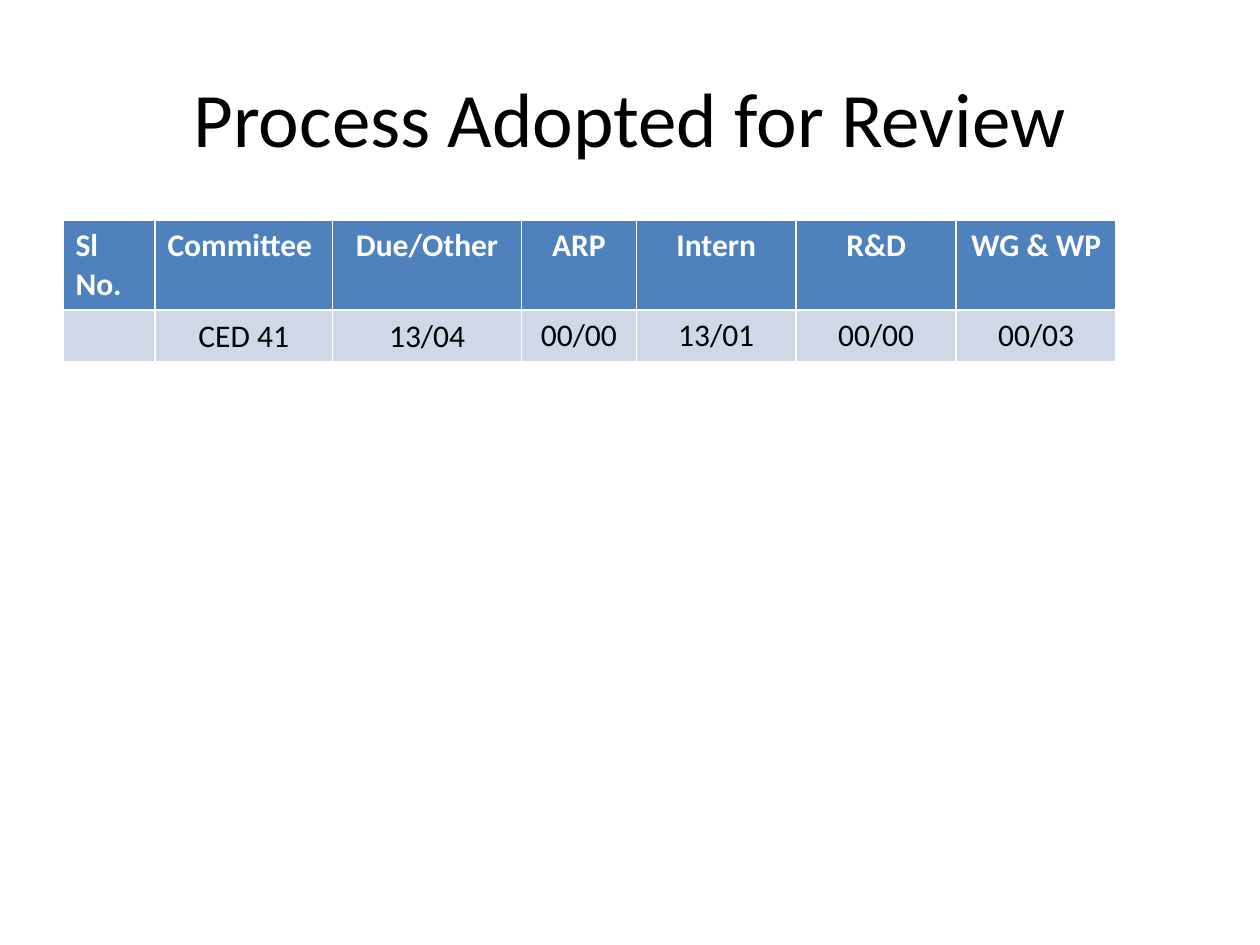
"""Build the slide that shows the process adopted for review."""
from pptx import Presentation
from pptx.dml.color import RGBColor
from pptx.enum.text import MSO_ANCHOR as Anchor, PP_ALIGN as Align
from pptx.util import Inches, Pt


def style(font, size, color, bold=False):
    font.name, font.size, font.bold = "Calibri", Pt(size), bold
    font.color.rgb = RGBColor.from_string(color)


deck = Presentation()
deck.slide_width, deck.slide_height = Inches(10), Inches(7.5)
slide = deck.slides.add_slide(deck.slide_layouts[5])
left = int(deck.slide_width * 0.05)

title = slide.shapes.title
title.left, title.top = left, int(deck.slide_height * 0.04)
title.width, title.height = deck.slide_width - 2 * left, Inches(1.25)
title.text_frame.text = "Process Adopted for Review"
title.text_frame.vertical_anchor = Anchor.MIDDLE
head = title.text_frame.paragraphs[0]
head.alignment = Align.CENTER
style(head.font, 44, "000000")

rows = [
    ["Sl No.", "Committee", "Due/Other", "ARP", "Intern", "R&D", "WG & WP"],
    ["", "CED 41", "13/04", "00/00", "13/01", "00/00", "00/03"],
]
looks = [("4F81BD", "FFFFFF", True), ("D0D8E8", "000000", False)]
widths = [0.73, 1.41, 1.5, 0.91, 1.27, 1.27, 1.27]
high = Inches(0.41)

table = slide.shapes.add_table(
    len(rows), len(widths), left, Inches(1.75),
    Inches(sum(widths)), high * len(rows)).table
for col, width in zip(table.columns, widths):
    col.width = Inches(width)

for r, (texts, (fill, ink, bold)) in enumerate(zip(rows, looks)):
    table.rows[r].height = high
    for c, text in enumerate(texts):
        cell = table.cell(r, c)
        cell.fill.solid()
        cell.fill.fore_color.rgb = RGBColor.from_string(fill)
        cell.text = text
        para = cell.text_frame.paragraphs[0]
        para.alignment = Align.LEFT if r == 0 and c < 2 else Align.CENTER
        style(para.font, 18, ink, bold)
        if r == 1 and c in (1, 2):
            cell.vertical_anchor = Anchor.MIDDLE
            cell.margin_left = cell.margin_right = Inches(0.07)
            cell.margin_top = cell.margin_bottom = 0
            para.line_spacing = 1.07

deck.save("out.pptx")
